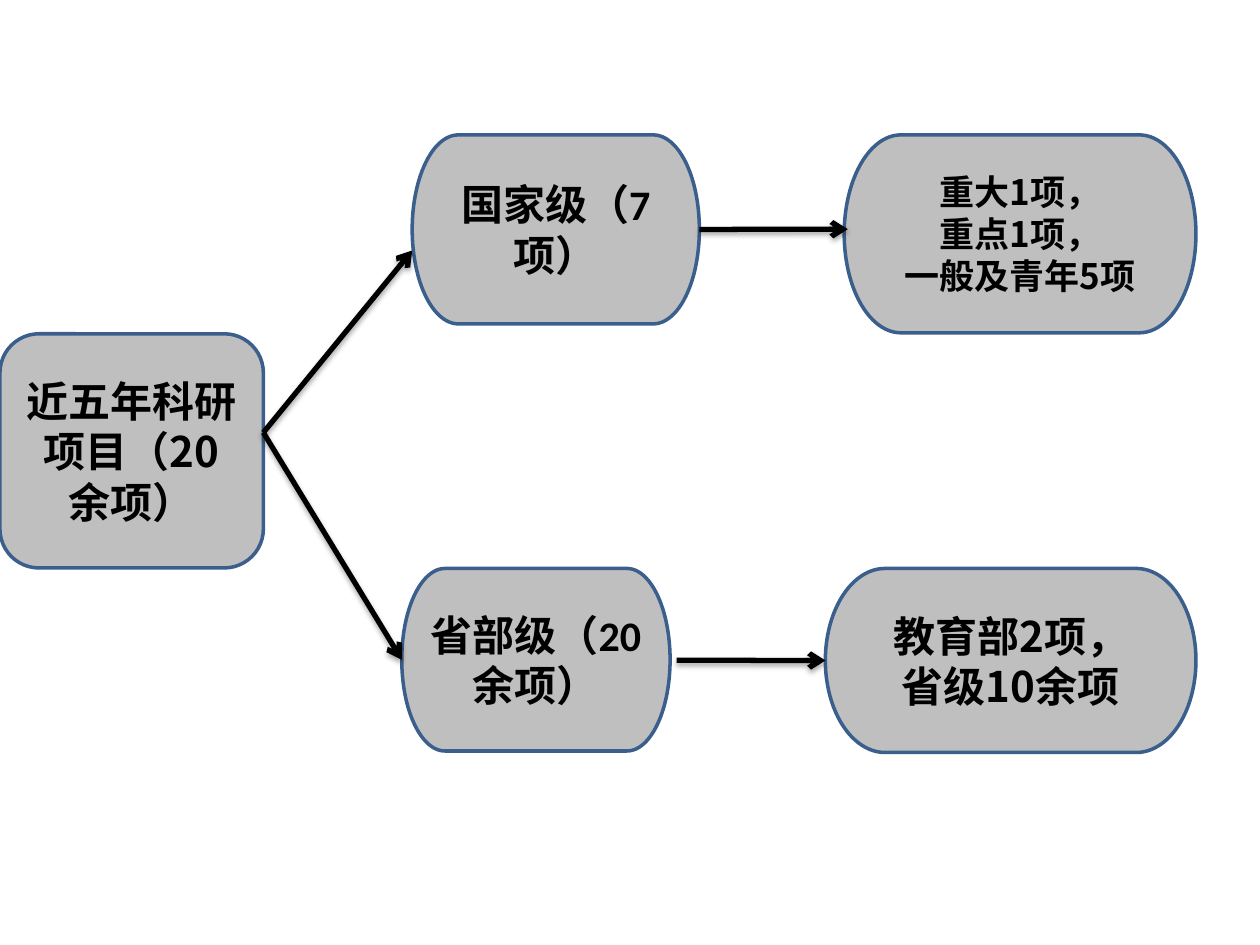
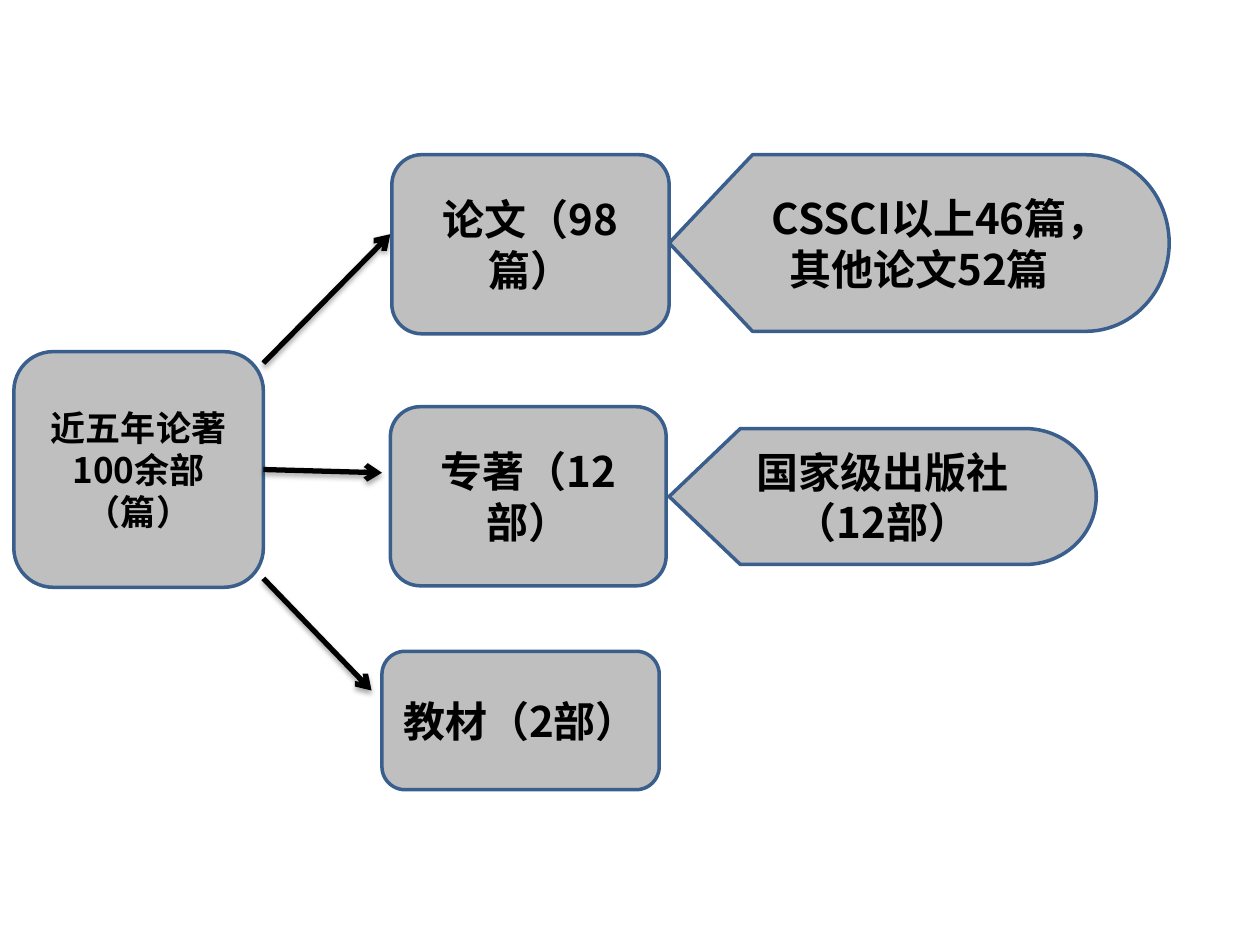
from lxml import etree
from pptx import Presentation
from pptx.dml.color import RGBColor
from pptx.enum import shapes, text
from pptx.oxml import ns
from pptx.util import Cm, Pt

FILL, EDGE, INK = "BFBFBF", "3A5F8C", "000000"
CJK, LATIN = "Noto Sans CJK SC", "Calibri"
ROUNDED = shapes.MSO_SHAPE.FLOWCHART_ALTERNATE_PROCESS
TERMINATOR = shapes.MSO_SHAPE.FLOWCHART_TERMINATOR
DISPLAY = shapes.MSO_SHAPE.FLOWCHART_DISPLAY
LEFT, RIGHT = 1, 3


def color(value):
    return RGBColor.from_string(value)


def child(parent, tag, **attrs):
    return etree.SubElement(parent, ns.qn(tag), attrs)


def write(tf, lines, size=24, font=CJK, bold=True, ink=INK):
    tf.word_wrap = True
    tf.vertical_anchor = text.MSO_ANCHOR.MIDDLE
    for i, line in enumerate(lines):
        p = tf.paragraphs[0] if i == 0 else tf.add_paragraph()
        p.alignment = text.PP_ALIGN.CENTER
        r = p.add_run()
        r.text = line
        r.font.size = Pt(size)
        r.font.bold = bold
        r.font.name = font
        r.font.color.rgb = color(ink)
        child(r.font._element, "a:ea", typeface=CJK)


def node(s, kind, box, *lines, **style):
    sp = s.shapes.add_shape(kind, *map(Cm, box))
    sp.shadow.inherit = False
    sp.fill.solid()
    sp.fill.fore_color.rgb = color(FILL)
    sp.line.color.rgb = color(EDGE)
    sp.line.width = Pt(2)
    write(sp.text_frame, lines, **style)
    return sp


def arrow(s, start, end, source=None, target=None):
    c = s.shapes.add_connector(shapes.MSO_CONNECTOR.STRAIGHT, *map(Cm, start + end))
    if source is not None:
        c.begin_connect(source, RIGHT)
    if target is not None:
        c.end_connect(target, LEFT)
    c.line.color.rgb = color(INK)
    c.line.width = Pt(3)
    child(c.line._get_or_add_ln(), "a:tailEnd", type="arrow")
    effects = child(c._element.spPr, "a:effectLst")
    shadow = child(effects, "a:outerShdw", blurRad=str(Pt(3.1)), dist=str(Pt(1.8)),
                   dir="5400000", rotWithShape="0")
    child(child(shadow, "a:srgbClr", val=INK), "a:alpha", val="35000")


def add_projects(prs):
    s = prs.slides.add_slide(prs.slide_layouts[6])
    fork = (5.31, 8.72)
    node(s, ROUNDED, (0, 6.73, 5.31, 4.72), "近五年科研项目（20余项）")
    national = node(s, TERMINATOR, (8.31, 2.72, 5.79, 3.81), "国家级（7项）", font=LATIN)
    provincial = node(s, TERMINATOR, (8.1, 11.46, 5.41, 3.68), "省部级（20余项）", font=LATIN)
    node(s, TERMINATOR, (17.02, 2.72, 7.09, 3.99),
         "重大1项，", "重点1项，", "一般及青年5项", size=20)
    provincial_detail = node(s, TERMINATOR, (16.64, 11.46, 7.47, 3.71),
                             "教育部2项，", "省级10余项")
    arrow(s, fork, (8.31, 5.05))
    arrow(s, fork, (8.1, 13.3), target=provincial)
    arrow(s, (14.1, 4.62), (17.09, 4.62), source=national)
    arrow(s, (13.64, 13.31), (16.64, 13.31), target=provincial_detail)


def add_publications(prs):
    s = prs.slides.add_slide(prs.slide_layouts[6])
    total = node(s, ROUNDED, (0.28, 7.09, 5.03, 4.75), "近五年论著", "100余部（篇）", size=20)
    arrow(s, (5.31, 7.32), (7.87, 4.72))
    arrow(s, (5.31, 9.46), (7.7, 9.53), source=total)
    arrow(s, (5.31, 11.66), (7.49, 13.92))
    node(s, ROUNDED, (7.9, 3.12, 5.59, 3.61), "论文（98篇）")
    node(s, ROUNDED, (7.87, 8.2, 5.56, 3.61), "专著（12部）")
    node(s, ROUNDED, (7.7, 13.13, 5.59, 2.79), "教材（2部）")
    node(s, DISPLAY, (13.49, 3.12, 10.08, 3.56), "CSSCI以上46篇，", "其他论文52篇")
    node(s, DISPLAY, (13.49, 8.64, 8.61, 2.74), "国家级出版社（12部）")


def main():
    prs = Presentation()
    prs.slide_width, prs.slide_height = Cm(25.4), Cm(19.05)
    add_projects(prs)
    add_publications(prs)
    prs.save("out.pptx")


if __name__ == "__main__":
    main()
